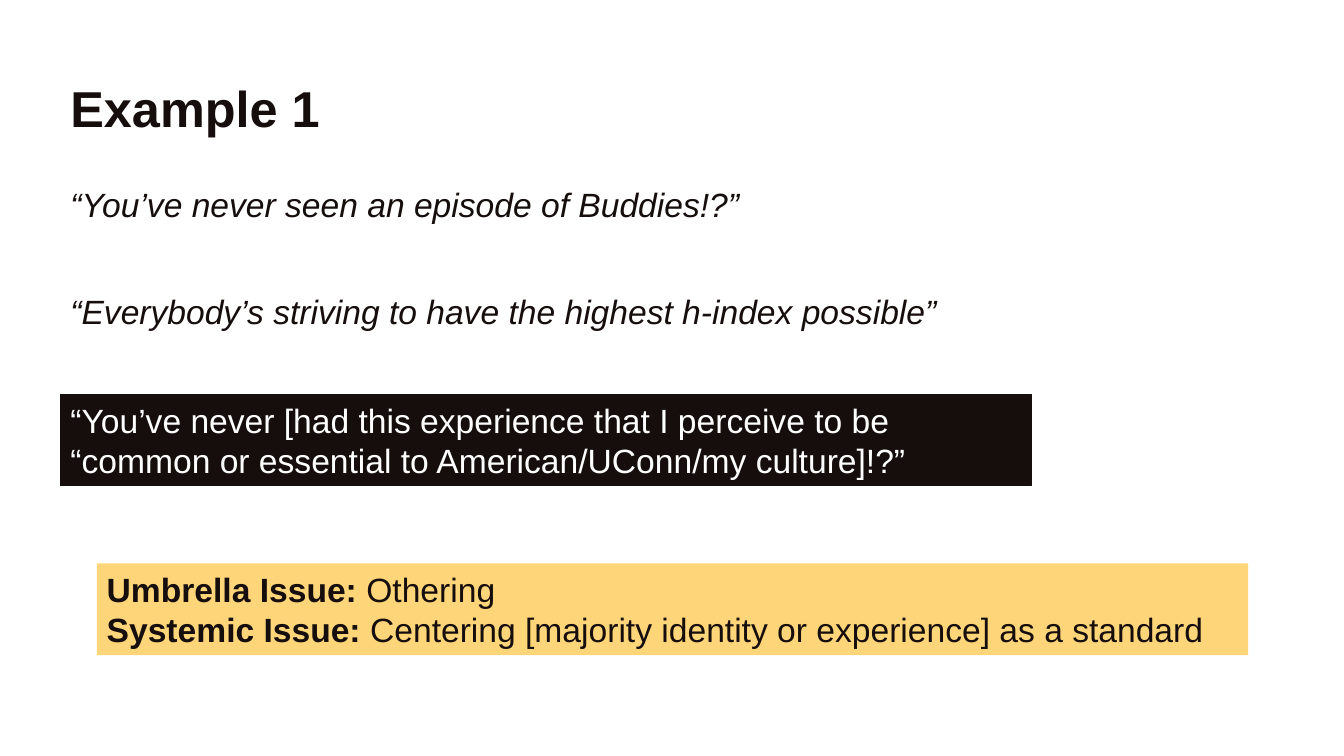
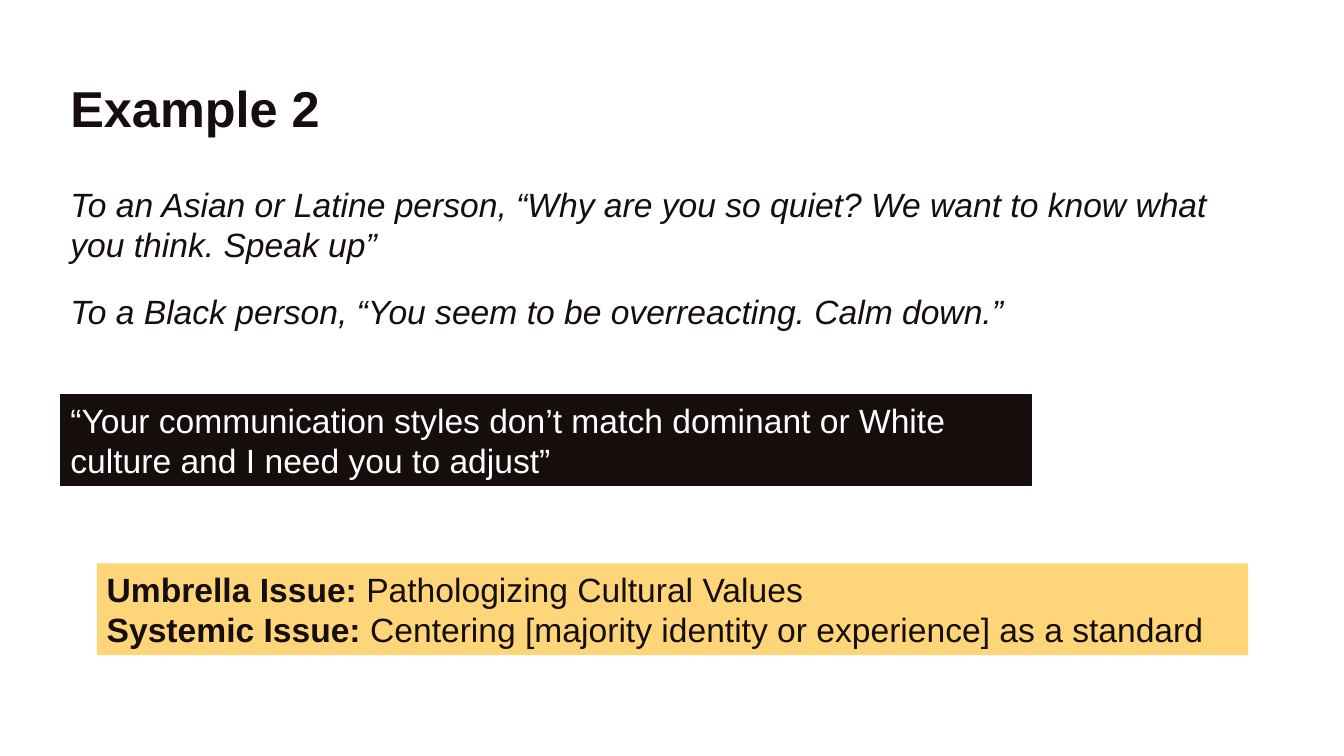
from pptx import Presentation
from pptx.dml.color import RGBColor
from pptx.enum.shapes import MSO_SHAPE
from pptx.enum.text import MSO_ANCHOR, PP_ALIGN
from pptx.util import Emu, Pt

PX = 9144  # 100 px to the inch
FONT = "Arial"
COLORS = {"ink": "150E0C", "white": "FFFFFF", "gold": "FFD579"}
LEFT = 60
LINE, PAIR = 50, 91  # heights of one-line and two-line boxes
SYSTEM = "Centering [majority identity or experience] as a standard"

SLIDES = [
    {
        "title": "Example 1",
        "quotes": [
            ("“You’ve never seen an episode of Buddies!?”", 690, LINE),
            ("“Everybody’s striving to have the highest h-index possible”", 892, LINE),
        ],
        "meaning": "“You’ve never [had this experience that I perceive to be "
                   "“common or essential to American/UConn/my culture]!?”",
        "issue": "Othering",
    },
    {
        "title": "Example 2",
        "quotes": [
            ("To an Asian or Latine person, “Why are you so quiet? "
             "We want to know what you think. Speak up”", 1201, PAIR),
            ("To a Black person, “You seem to be overreacting. Calm down.”", 968, LINE),
        ],
        "meaning": "“Your communication styles don’t match dominant or White "
                   "culture and I need you to adjust”",
        "issue": "Pathologizing Cultural Values",
    },
]


def color(name):
    return RGBColor.from_string(COLORS[name])


def place(*lengths):
    return [Emu(n * PX) for n in lengths]


def set_frame(shape):
    frame = shape.text_frame
    frame.word_wrap = True
    frame.vertical_anchor = MSO_ANCHOR.MIDDLE
    return frame


def add_band(slide, box, fill, edge=False):
    """Add a filled band and return its text frame."""
    band = slide.shapes.add_shape(MSO_SHAPE.RECTANGLE, *place(*box))
    band.shadow.inherit = False
    band.fill.solid()
    band.fill.fore_color.rgb = color(fill)
    if edge:
        band.line.color.rgb = color(fill)
        band.line.width = Pt(0.75)
    else:
        band.line.fill.background()
    return set_frame(band)


def write(frame, rows, size=24, ink="ink", italic=False):
    """Fill a frame with rows of (text, bold) runs."""
    for i, row in enumerate(rows):
        para = frame.add_paragraph() if i else frame.paragraphs[0]
        para.alignment = PP_ALIGN.LEFT
        for text, bold in row:
            run = para.add_run()
            run.text = text
            font = run.font
            font.name, font.size = FONT, Pt(size)
            font.bold, font.italic = bold, italic
            font.color.rgb = color(ink)


def add_title(slide, text):
    box = slide.shapes.add_textbox(*place(LEFT, 71, 270, 71))
    write(set_frame(box), [[(text, True)]], size=36)


def add_quotes(slide, quotes):
    for i, (text, width, height) in enumerate(quotes):
        box = (LEFT, 177 + 107 * i, width, height)
        write(add_band(slide, box, "white"), [[(text, False)]], italic=True)


def add_meaning(slide, text):
    frame = add_band(slide, (LEFT, 391, 963, PAIR), "ink", edge=True)
    write(frame, [[(text, False)]], ink="white")


def add_issues(slide, issue):
    frame = add_band(slide, (96, 559, 1142, PAIR), "gold")
    pairs = [("Umbrella Issue: ", issue), ("Systemic Issue: ", SYSTEM)]
    write(frame, [[(label, True), (text, False)] for label, text in pairs])


def add_slide(deck, data):
    slide = deck.slides.add_slide(deck.slide_layouts[6])
    add_title(slide, data["title"])
    add_quotes(slide, data["quotes"])
    add_meaning(slide, data["meaning"])
    add_issues(slide, data["issue"])


def main():
    deck = Presentation()
    deck.slide_width, deck.slide_height = place(1333, 750)
    for data in SLIDES:
        add_slide(deck, data)
    deck.save("out.pptx")


if __name__ == "__main__":
    main()
